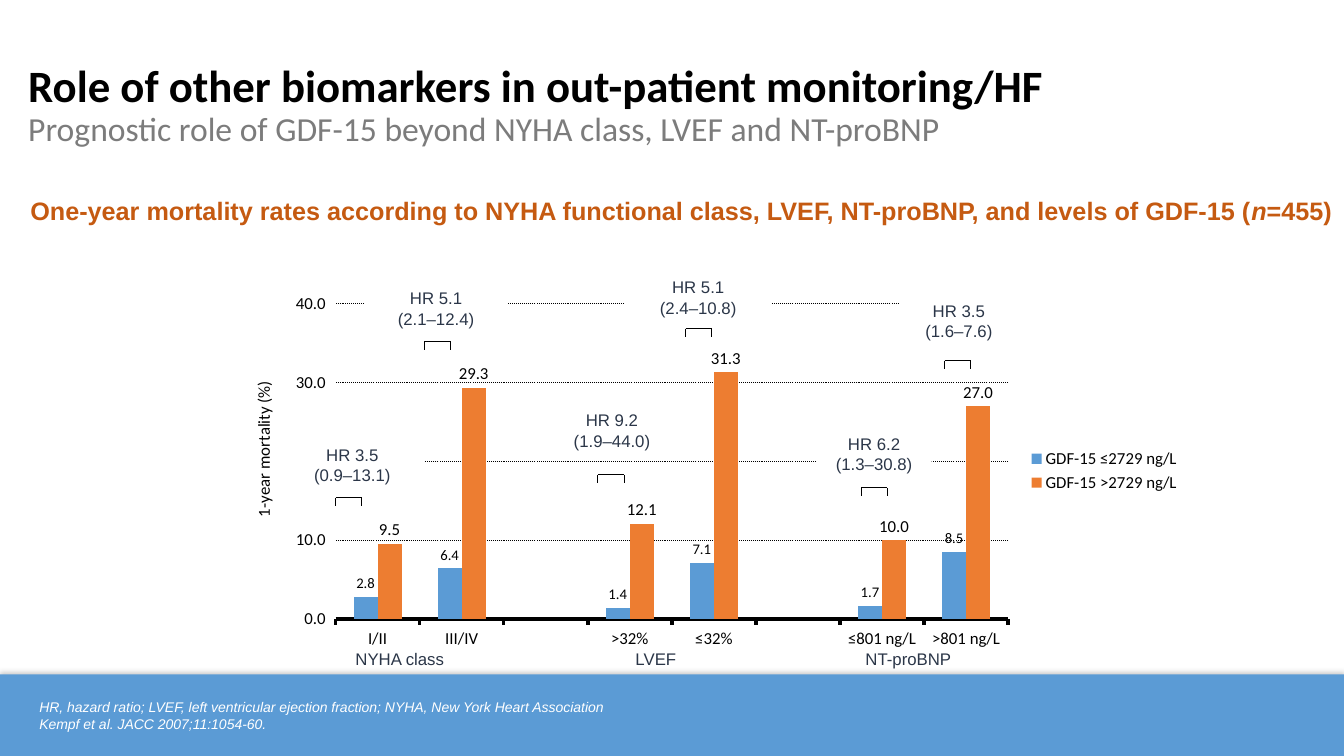
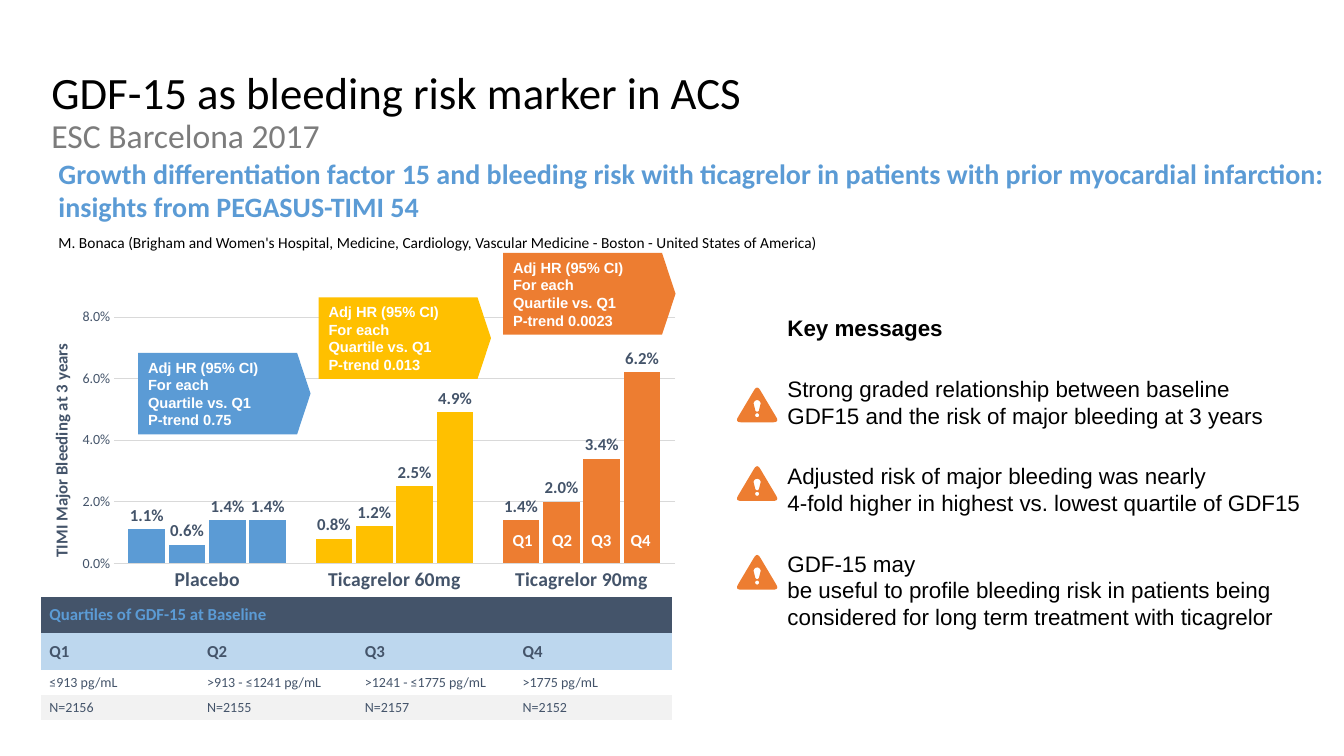
from copy import deepcopy
from dataclasses import dataclass
from math import cos, pi, sin, dist

from lxml.etree import SubElement
from pptx import Presentation
from pptx.chart.data import CategoryChartData
from pptx.dml.color import RGBColor
from pptx.enum.chart import XL_CHART_TYPE as ChartType, XL_LABEL_POSITION as LabelPosition
from pptx.enum.chart import XL_LEGEND_POSITION as LegendPosition, XL_TICK_MARK as Tick
from pptx.enum.dml import MSO_LINE as Dash
from pptx.enum.shapes import MSO_CONNECTOR as Connector, MSO_SHAPE as Preset
from pptx.enum.text import MSO_ANCHOR as Anchor, MSO_AUTO_SIZE as AutoSize, PP_ALIGN as Align
from pptx.oxml import parse_xml
from pptx.oxml.ns import nsdecls, qn
from pptx.util import Inches, Pt


@dataclass(frozen=True)
class Theme:
    """Colours, fonts and type sizes of the deck."""
    black: str = "000000"
    white: str = "FFFFFF"
    grey: str = "7C7C7C"
    grid: str = "D9D9D9"
    pale: str = "F2F2F2"
    blue: str = "5B9BD5"
    sky: str = "BDD7EE"
    orange: str = "ED7D31"
    rust: str = "C55A11"
    yellow: str = "FFC000"
    slate: str = "44546A"
    ink: str = "2B3648"
    heading: str = "Calibri"
    plain: str = "Arial"
    title: float = 32
    subtitle: float = 24
    lead: float = 20
    headline: float = 18
    body: float = 16
    category: float = 14
    label: float = 12
    byline: float = 11
    callout: float = 10.5
    small: float = 10


THEME = Theme()


def rgb(value):
    """Turn a hex string into a colour."""
    return RGBColor.from_string(value)


def style_font(font, size, color=THEME.black, name=THEME.heading, bold=False, italic=False):
    """Format one font."""
    font.size, font.name, font.bold, font.italic = Pt(size), name, bold, italic
    font.color.rgb = rgb(color)


def write(frame, paragraphs, align=Align.LEFT, anchor=Anchor.TOP, insets=(0.1, 0.05),
          wrap=True, before=0, after=0, spacing=1.0, **style):
    """Fill a text frame; a paragraph is a string or a list of (text, format) spans."""
    frame.word_wrap, frame.vertical_anchor = wrap, anchor
    frame.auto_size = AutoSize.NONE
    frame.margin_left = frame.margin_right = Inches(insets[0])
    frame.margin_top = frame.margin_bottom = Inches(insets[1])
    for index, spans in enumerate(paragraphs):
        para = frame.add_paragraph() if index else frame.paragraphs[0]
        para.alignment, para.line_spacing = align, spacing
        para.space_before, para.space_after = Pt(before), Pt(after)
        for text, changes in [(spans, {})] if isinstance(spans, str) else spans:
            for number, piece in enumerate(text.split("\n")):
                if number:
                    para.add_line_break()
                if piece:
                    span = para.add_run()
                    span.text = piece
                    style_font(span.font, **{**style, **changes})
                    previous = span._r.getprevious()
                    if previous is not None and previous.tag == qn("a:br"):
                        previous.append(deepcopy(span._r.rPr))


def add_text(slide, place, paragraphs, **style):
    """Add a text box."""
    box = slide.shapes.add_textbox(*map(Inches, place))
    write(box.text_frame, paragraphs, **style)


def paint(shape, fill):
    """Give a shape a plain fill without line or shadow."""
    shape.shadow.inherit = False
    shape.fill.solid()
    shape.fill.fore_color.rgb = rgb(fill)
    shape.line.fill.background()


def add_panel(slide, place, fill, paragraphs, preset=Preset.RECTANGLE, **style):
    """Add a filled shape with text."""
    panel = slide.shapes.add_shape(preset, *map(Inches, place))
    paint(panel, fill)
    write(panel.text_frame, paragraphs, **style)
    return panel


def add_title(slide, place, title, subtitle, bold=False):
    """Fill the title placeholder with a title and a grey second line."""
    holder = slide.shapes.title
    holder.left, holder.top, holder.width, holder.height = map(Inches, place)
    spans = [(title + "\n", {"bold": bold}),
             (subtitle, {"size": THEME.subtitle, "color": THEME.grey})]
    write(holder.text_frame, [spans], anchor=Anchor.MIDDLE, spacing=0.9, size=THEME.title)


def add_line(slide, *ends):
    """Add a thin black line."""
    line = slide.shapes.add_connector(Connector.STRAIGHT, *map(Inches, ends))
    line.line.color.rgb, line.line.width = rgb(THEME.black), Pt(0.75)
    SubElement(line.element.spPr, qn("a:effectLst"))


def add_bracket(slide, left, top, width=0.26, drop=0.08):
    """Add a bracket open at the bottom."""
    add_line(slide, left, top, left + width, top)
    for x in (left, left + width):
        add_line(slide, x, top, x, top + drop)


def set_layout(parent, position, **values):
    """Place a chart part by fractions of the chart."""
    layout = parent.find(qn("c:layout"))
    if layout is None:
        layout = parent.makeelement(qn("c:layout"))
        parent.insert(position, layout)
    manual = SubElement(layout, qn("c:manualLayout"))
    if "w" in values:
        SubElement(manual, qn("c:layoutTarget")).set("val", "inner")
    for mode in ("xMode", "yMode"):
        SubElement(manual, qn("c:" + mode)).set("val", "edge")
    for key, value in values.items():
        SubElement(manual, qn("c:" + key)).set("val", str(value))


def style_value_axis(axis, title, title_at, top, step, number_format, size, color, bold):
    """Scale the value axis and set its rotated title."""
    axis.minimum_scale, axis.maximum_scale, axis.major_unit = 0, top, step
    axis.format.line.fill.background()
    axis.tick_labels.number_format = number_format
    axis.tick_labels.number_format_is_linked = False
    style_font(axis.tick_labels.font, size, color)
    heading = axis.axis_title
    span = heading.text_frame.paragraphs[0].add_run()
    span.text = title
    style_font(span.font, THEME.label, color, bold=bold)
    heading._element.find(".//" + qn("a:bodyPr")).set("rot", "-5400000")
    set_layout(heading._element, 1, x=title_at[0], y=title_at[1])


def add_columns(slide, place, plot_area, categories, series, gap, overlap, number_format,
                label_sizes, title, title_at, top, step, tick, category_size, tick_size,
                color, bold, axis_line, grid_line):
    """Add a clustered column chart."""
    data = CategoryChartData()
    data.categories = categories
    for name, values in series:
        data.add_series(name, values)
    chart = slide.shapes.add_chart(ChartType.COLUMN_CLUSTERED, *map(Inches, place), data).chart
    chart.has_title = chart.has_legend = False
    style_font(chart.font, THEME.label)
    plot = chart.plots[0]
    plot.gap_width, plot.overlap, plot.vary_by_categories = gap, overlap, False
    for one, size in zip(plot.series, label_sizes):
        one.invert_if_negative = False
        labels = one.data_labels
        labels.show_value, labels.position = True, LabelPosition.OUTSIDE_END
        labels.number_format, labels.number_format_is_linked = number_format, False
        style_font(labels.font, size, color, bold=bold)
    style_value_axis(chart.value_axis, title, title_at, top, step, number_format,
                     tick_size, color, bold)
    style_font(chart.category_axis.tick_labels.font, category_size, color, bold=bold)
    for axis in (chart.category_axis, chart.value_axis):
        axis.major_tick_mark, axis.minor_tick_mark = tick, Tick.NONE
    lines = ((chart.category_axis.format.line, axis_line),
             (chart.value_axis.major_gridlines.format.line, grid_line))
    for line, (line_color, width, dash) in lines:
        line.color.rgb, line.width, line.dash_style = rgb(line_color), Pt(width), dash
    set_layout(chart._chartSpace.find(".//" + qn("c:plotArea")), 0,
               **dict(zip("xywh", plot_area)))
    return chart


def fill_bar(target, color):
    """Give a series or a point a solid fill."""
    target.format.fill.solid()
    target.format.fill.fore_color.rgb = rgb(color)


def arc(x, y, radius, start, end, steps=16):
    """List points along a circular arc."""
    angles = [start + (end - start) * step / steps for step in range(steps + 1)]
    return [(x + radius * cos(angle), y + radius * sin(angle)) for angle in angles]


def rounded(corners, cut, steps=6):
    """List points of a polygon with its corners rounded."""
    points = []
    for index, corner in enumerate(corners):
        before, after = corners[index - 1], corners[(index + 1) % len(corners)]
        start, end = ([c + (o - c) * cut / dist(corner, other) for c, o in zip(corner, other)]
                      for other in (before, after))
        for t in (step / steps for step in range(steps + 1)):
            points.append(tuple((1 - t) ** 2 * s + 2 * t * (1 - t) * c + t * t * e
                                for s, c, e in zip(start, corner, end)))
    return points


def add_warning(slide, left, top):
    """Add a warning triangle with an exclamation mark cut out."""
    contours = [rounded([(0.2, -0.02), (0.42, 0.35), (-0.02, 0.35)], 0.06),
                arc(0.2, 0.165, 0.035, 0, -pi) + arc(0.2, 0.225, 0.02, pi, 0),
                arc(0.2, 0.28, 0.02, 0, 2 * pi)]
    contours = [[(Inches(left + x), Inches(top + y)) for x, y in points] for points in contours]
    builder = slide.shapes.build_freeform(*contours[0][0], scale=1.0)
    for index, points in enumerate(contours):
        if index:
            builder.move_to(*points[0])
        builder.add_line_segments(points[1:], close=True)
    paint(builder.convert_to_shape(), THEME.orange)


def add_quartiles(slide):
    """Add the table of quartiles."""
    rows = [(["Quartiles of GDF-15 at Baseline"], THEME.slate, THEME.blue, True),
            (["Q1", "Q2", "Q3", "Q4"], THEME.sky, THEME.slate, True),
            (["≤913 pg/mL", ">913 - ≤1241 pg/mL", ">1241 - ≤1775 pg/mL", ">1775 pg/mL"],
             THEME.white, THEME.slate, False),
            (["N=2156", "N=2155", "N=2157", "N=2152"], THEME.pale, THEME.slate, False)]
    frame = slide.shapes.add_table(4, 4, *map(Inches, (0.41, 5.92, 6.26, 1.22)))
    table = frame.table
    table.first_row = table.horz_banding = False
    for style in frame.element.iter(qn("a:tableStyleId")):
        style.text = "{2D5ABB26-0587-4C30-8999-92F81FD0307C}"
    table.cell(0, 0).merge(table.cell(0, 3))
    for row, (texts, fill, color, strong) in enumerate(rows):
        table.rows[row].height = Inches(0.36 if strong else 0.25)
        for column, text in enumerate(texts):
            cell = table.cell(row, column)
            cell.fill.solid()
            cell.fill.fore_color.rgb = rgb(fill)
            write(cell.text_frame, [text], color=color, bold=strong,
                  size=THEME.label if strong else THEME.small)
            cell.vertical_anchor = Anchor.MIDDLE
            cell.margin_left = cell.margin_right = Inches(0.08)
            cell.margin_top = cell.margin_bottom = Inches(0.08 if strong else 0.04)


def add_footer(slide, paragraphs):
    """Add the footer band with a soft shadow above it."""
    band = add_panel(slide, (0, 6.69, 13.33, 0.81), THEME.blue, paragraphs,
                     anchor=Anchor.MIDDLE, insets=(0.39, 0), size=THEME.small,
                     color=THEME.white, name=THEME.plain, italic=True)
    band.element.spPr.find(qn("a:effectLst")).append(parse_xml(
        f'<a:outerShdw {nsdecls("a")} blurRad="{Pt(4)}" dist="{Pt(2)}" dir="16200000">'
        f'<a:srgbClr val="{THEME.black}"><a:alpha val="20000"/></a:srgbClr></a:outerShdw>'))


def build_mortality(deck):
    """Build the slide on one-year mortality."""
    slide = deck.slides.add_slide(deck.slide_layouts[5])
    add_title(slide, (0.18, 0.33, 12.37, 1.45),
              "Role of other biomarkers in out-patient monitoring/HF ",
              "Prognostic role of GDF-15 beyond NYHA class, LVEF and NT-proBNP", bold=True)
    chart = add_columns(
        slide, (2.28, 2.83, 9.53, 3.68), (0.11, 0.05, 0.7, 0.85),
        ["I/II", "III/IV", "", ">32%", "≤32%", "", "≤801 ng/L", ">801 ng/L"],
        [("GDF-15 ≤2729 ng/L", (2.8, 6.4, None, 1.4, 7.1, None, 1.7, 8.5)),
         ("GDF-15 >2729 ng/L", (9.5, 29.3, None, 12.1, 31.3, None, 10, 27))],
        gap=150, overlap=0, number_format="0.0", label_sizes=(THEME.callout, THEME.label),
        title="1-year mortality (%)", title_at=(0.02, 0.25), top=40, step=10,
        tick=Tick.OUTSIDE, category_size=THEME.label, tick_size=THEME.label,
        color=THEME.black, bold=False, axis_line=(THEME.black, 2.5, Dash.SOLID),
        grid_line=(THEME.black, 0.75, Dash.ROUND_DOT))
    for one, color in zip(chart.plots[0].series, (THEME.blue, THEME.orange)):
        fill_bar(one, color)
    chart.has_legend = True
    chart.legend.position, chart.legend.include_in_layout = LegendPosition.RIGHT, False
    style_font(chart.legend.font, THEME.label)
    headline = "One-year mortality rates according to NYHA functional class, LVEF, NT-proBNP, "
    add_text(slide, (0.18, 1.89, 13.15, 0.4),
             [[(headline + "and levels of GDF-15 (", {}), ("n", {"italic": True}), ("=455)", {})]],
             align=Align.CENTER, size=THEME.headline, color=THEME.rust, name=THEME.plain, bold=True)
    note = dict(align=Align.CENTER, size=THEME.label, color=THEME.ink, name=THEME.plain)
    for text, left, width in (("NYHA class", 3.42, 1.09), ("LVEF", 6.2, 0.61),
                              ("NT-proBNP", 8.48, 1.06)):
        add_text(slide, (left, 6.39, width, 0.3), [text], wrap=False, **note)
    ratios = [("HR 3.5\n(0.9–13.1)", 2.78, 4.36, 1.43, 3.33, 4.94),
              ("HR 5.1\n(2.1–12.4)", 3.62, 2.81, 1.41, 4.21, 3.39),
              ("HR 9.2\n(1.9–44.0)", 5.43, 4.02, 1.28, 5.93, 4.71),
              ("HR 5.1\n(2.4–10.8)", 6.2, 2.7, 1.45, 6.8, 3.26),
              ("HR 6.2\n(1.3–30.8)", 8.1, 4.25, 1.14, 8.54, 4.84),
              ("HR 3.5\n(1.6–7.6)", 8.92, 2.93, 1.18, 9.37, 3.58)]
    for text, left, top, width, bracket_left, bracket_top in ratios:
        add_panel(slide, (left, top, width, 0.5), THEME.white, [text], **note)
        add_bracket(slide, bracket_left, bracket_top)
    add_footer(slide, ["HR, hazard ratio; LVEF, left ventricular ejection fraction; "
                       "NYHA, New York Heart Association", "Kempf et al. JACC 2007;11:1054-60."])


def add_messages(slide):
    """Fill the body placeholder with the key messages and mark each one."""
    body = slide.placeholders[1]
    body.left, body.top, body.width, body.height = map(Inches, (7.71, 3.07, 5.43, 3.26))
    messages = ["Strong graded relationship between baseline\n"
                "GDF15 and the risk of major bleeding at 3 years",
                "Adjusted risk of major bleeding was nearly\n"
                "4-fold higher in highest vs. lowest quartile of GDF15",
                "GDF-15 may\nbe useful to profile bleeding risk in patients being\n"
                "considered for long term treatment with ticagrelor"]
    write(body.text_frame, [[("Key messages", {"bold": True})], *messages], after=24,
          size=THEME.body, name=THEME.plain)
    for para in body.text_frame.paragraphs:
        properties = para._p.get_or_add_pPr()
        properties.set("marL", "0")
        properties.set("indent", "0")
        SubElement(properties, qn("a:buNone"))
    for top in (3.84, 4.62, 5.5):
        add_warning(slide, 7.31, top)


def build_bleeding(deck):
    """Build the slide on bleeding risk."""
    slide = deck.slides.add_slide(deck.slide_layouts[1])
    add_title(slide, (0.41, 0.4, 12.01, 1.45),
              "GDF-15 as bleeding risk marker in ACS", "ESC Barcelona 2017")
    study = ("Growth differentiation factor 15 and bleeding risk with ticagrelor in patients "
             "with prior myocardial infarction: insights from PEGASUS-TIMI 54")
    author = ("M. Bonaca (Brigham and Women's Hospital, Medicine, Cardiology, "
              "Vascular Medicine - Boston - United States of America)")
    add_text(slide, (0.58, 1.55, 12.56, 1),
             [[(study, {"size": THEME.lead, "color": THEME.blue, "bold": True})], author],
             insets=(0, 0), before=7, size=THEME.byline)
    add_messages(slide)
    add_quartiles(slide)
    values = [(1.1, 0.8, 1.4), (0.6, 1.2, 2), (1.4, 2.5, 3.4), (1.4, 4.9, 6.2)]
    chart = add_columns(
        slide, (0.2, 3, 6.63, 2.91), (0.14, 0.05, 0.84, 0.84),
        ["Placebo", "Ticagrelor 60mg", "Ticagrelor 90mg"],
        [(f"Series {number}", row) for number, row in enumerate(values, 1)],
        gap=80, overlap=-10, number_format='0.0"%"', label_sizes=[THEME.label] * 4,
        title="TIMI Major Bleeding at 3 years", title_at=(0.04, 0.13), top=8, step=2,
        tick=Tick.NONE, category_size=THEME.category, tick_size=THEME.small,
        color=THEME.slate, bold=True, axis_line=(THEME.grid, 0.75, Dash.SOLID),
        grid_line=(THEME.grid, 0.75, Dash.SOLID))
    style_font(chart.value_axis.tick_labels.font, THEME.small, THEME.slate)
    callouts = [("0.75", 1.37, 3.5, THEME.blue), ("0.013", 3.16, 2.95, THEME.yellow),
                ("0.0023", 4.99, 2.51, THEME.orange)]
    for index, (trend, left, top, color) in enumerate(callouts):
        for one in chart.plots[0].series:
            fill_bar(one.points[index], color)
        arrow = add_panel(slide, (left, top, 1.71, 0.81), color,
                          ["Adj HR (95% CI)", "For each \nQuartile vs. Q1", f"P-trend {trend}"],
                          preset=Preset.PENTAGON, anchor=Anchor.MIDDLE, size=THEME.callout,
                          color=THEME.white, name=THEME.plain, bold=True)
        arrow.adjustments[0] = 0.165
    for index in range(4):
        add_text(slide, (4.91 + 0.39 * index, 5.21, 0.55, 0.3), [f"Q{index + 1}"],
                 align=Align.CENTER, size=THEME.label, color=THEME.white, bold=True)


def main():
    """Build and save the deck."""
    deck = Presentation()
    deck.slide_width, deck.slide_height = Inches(13.33), Inches(7.5)
    build_mortality(deck)
    build_bleeding(deck)
    deck.save("out.pptx")


if __name__ == "__main__":
    main()
